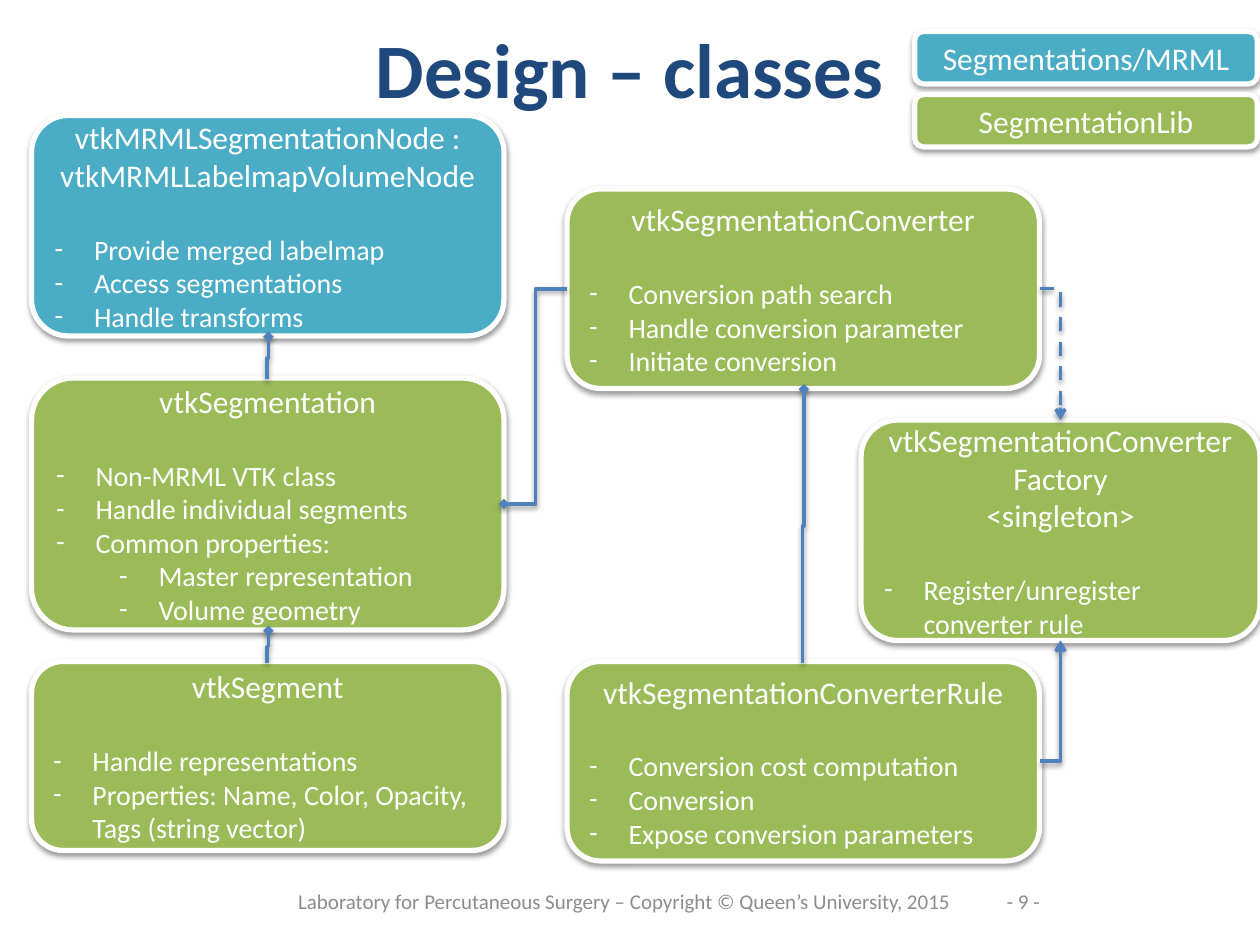
from dataclasses import dataclass
from typing import Optional

from lxml.etree import SubElement
from pptx import Presentation
from pptx.dml.color import RGBColor
from pptx.enum.dml import MSO_LINE
from pptx.enum.shapes import MSO_CONNECTOR, MSO_SHAPE
from pptx.enum.text import MSO_ANCHOR, PP_ALIGN
from pptx.oxml.ns import qn
from pptx.util import Pt

WHITE = RGBColor(0xFF, 0xFF, 0xFF)
TEAL = RGBColor(0x4B, 0xAC, 0xC6)
GREEN = RGBColor(0x9B, 0xBB, 0x59)
BLUE = RGBColor(0x4F, 0x81, 0xBD)
NAVY = RGBColor(0x1F, 0x49, 0x7D)
GRAY = RGBColor(0x8C, 0x8C, 0x8C)

# Text formats
HEAD = {"name": "Calibri", "size": Pt(18)}
ITEM = {"name": "Calibri", "size": Pt(16)}
TITLE = {"name": "Calibri", "size": Pt(44), "bold": True}
FOOT = {"name": "Calibri", "size": Pt(12)}

INDENT = 22.5  # hanging indent of a bullet
STEP = 36      # extra indent per level
GAP = 22       # space between heading and bullets


@dataclass
class Card:
    left: float
    top: float
    width: float
    height: float
    fill: RGBColor
    heads: tuple[str, ...]
    items: tuple[str, ...] = ()
    subs: tuple[str, ...] = ()


@dataclass
class Link:
    start: tuple[float, float]
    end: tuple[float, float]
    tip: str = "diamond"
    turn: bool = False    # leaves the card upward
    corner: bool = False  # one bend only
    dash: Optional[MSO_LINE] = None


@dataclass
class Label:
    left: float
    top: float
    width: float
    height: float
    text: str
    style: dict
    color: RGBColor


def add_text(para, text: str, style: dict, color: RGBColor) -> None:
    run = para.add_run()
    run.text = text
    for key, value in style.items():
        setattr(run.font, key, value)
    run.font.color.rgb = color


def add_bullet(para, level: int) -> None:
    props = para._p.get_or_add_pPr()
    props.set("marL", str(Pt(INDENT + STEP * level)))
    props.set("indent", str(-Pt(INDENT)))
    SubElement(props, qn("a:buFont"), typeface="Calibri")
    SubElement(props, qn("a:buChar"), char="-")
    para.level = level
    para.alignment = PP_ALIGN.LEFT


def add_shadow(effects) -> None:
    outer = SubElement(effects, qn("a:outerShdw"), blurRad=str(Pt(3.1)),
                       dist=str(Pt(1.6)), dir="5400000", rotWithShape="0")
    black = SubElement(outer, qn("a:srgbClr"), val="000000")
    SubElement(black, qn("a:alpha"), val="38000")


def draw_label(slide, label: Label) -> None:
    box = slide.shapes.add_textbox(Pt(label.left), Pt(label.top),
                                   Pt(label.width), Pt(label.height))
    frame = box.text_frame
    frame.word_wrap = True
    frame.vertical_anchor = MSO_ANCHOR.MIDDLE
    para = frame.paragraphs[0]
    para.alignment = PP_ALIGN.CENTER
    add_text(para, label.text, label.style, label.color)


def draw_card(slide, card: Card) -> None:
    shape = slide.shapes.add_shape(
        MSO_SHAPE.ROUNDED_RECTANGLE, Pt(card.left), Pt(card.top),
        Pt(card.width), Pt(card.height))
    shape.fill.solid()
    shape.fill.fore_color.rgb = card.fill
    shape.line.color.rgb = WHITE
    shape.line.width = Pt(3)
    shape.shadow.inherit = False
    add_shadow(shape._element.spPr.find(qn("a:effectLst")))

    frame = shape.text_frame
    frame.word_wrap = True
    frame.vertical_anchor = MSO_ANCHOR.MIDDLE
    for i, text in enumerate(card.heads):
        para = frame.add_paragraph() if i else frame.paragraphs[0]
        para.alignment = PP_ALIGN.CENTER
        add_text(para, text, HEAD, WHITE)
    rows = [(0, text) for text in card.items] + [(1, text) for text in card.subs]
    for i, (level, text) in enumerate(rows):
        para = frame.add_paragraph()
        add_bullet(para, level)
        if i == 0:
            para.space_before = Pt(GAP)
        add_text(para, text, ITEM, WHITE)


def draw_link(slide, link: Link) -> None:
    (x1, y1), (x2, y2) = link.start, link.end
    if link.turn:
        # Lay the line flat around its centre, to be turned a quarter
        mid_x, mid_y = (x1 + x2) / 2, (y1 + y2) / 2
        half_w, half_h = (y1 - y2) / 2, (x2 - x1) / 2
        x1, y1 = mid_x + half_w, mid_y + half_h
        x2, y2 = mid_x - half_w, mid_y - half_h
    line = slide.shapes.add_connector(MSO_CONNECTOR.ELBOW, Pt(x1), Pt(y1),
                                      Pt(x2), Pt(y2))
    line.line.color.rgb = BLUE
    line.line.width = Pt(2)
    if link.dash:
        line.line.dash_style = link.dash
    props = line._element.spPr
    if link.turn:
        props.find(qn("a:xfrm")).set("rot", "5400000")
    if link.corner:
        props.find(qn("a:prstGeom")).set("prst", "bentConnector2")
    SubElement(props.find(qn("a:ln")), qn("a:tailEnd"), type=link.tip)
    add_shadow(SubElement(props, qn("a:effectLst")))


# Column edges and card width
LEFT, MID, WIDE = 18, 324, 270
KEY = (522.7, 195.8, 30)

LABELS = [
    Label(563.8, 500.4, 41.8, 28.8, "- 9 -", FOOT, GRAY),
    Label(149.8, 500.4, 414, 28.8,
          "Laboratory for Percutaneous Surgery – Copyright © "
          "Queen’s University, 2015", FOOT, GRAY),
    Label(36, 5.8, 648, 66.2, "Design – classes", TITLE, NAVY),
]

CARDS = [
    Card(LEFT, 66, WIDE, 126, TEAL,
         ("vtkMRMLSegmentationNode : vtkMRMLLabelmapVolumeNode",),
         ("Provide merged labelmap", "Access segmentations",
          "Handle transforms")),
    Card(LEFT, 216, WIDE, 144, GREEN, ("vtkSegmentation",),
         ("Non-MRML VTK class", "Handle individual segments",
          "Common properties:"),
         ("Master representation", "Volume geometry")),
    Card(LEFT, 378, WIDE, 108, GREEN, ("vtkSegment",),
         ("Handle representations",
          "Properties: Name, Color, Opacity, Tags (string vector)")),
    Card(MID, 108, WIDE, 114, GREEN, ("vtkSegmentationConverter",),
         ("Conversion path search", "Handle conversion parameter",
          "Initiate conversion")),
    Card(MID, 378, WIDE, 114, GREEN, ("vtkSegmentationConverterRule",),
         ("Conversion cost computation", "Conversion",
          "Expose conversion parameters")),
    Card(492, 240, 228, 126, GREEN,
         ("vtkSegmentationConverterFactory", "<singleton>"),
         ("Register/unregister converter rule",)),
    # Colour key
    Card(KEY[0], 18, KEY[1], KEY[2], TEAL, ("Segmentations/MRML",)),
    Card(KEY[0], 54, KEY[1], KEY[2], GREEN, ("SegmentationLib",)),
]

LINKS = [
    Link((152.6, 216.7), (153.4, 192.5), turn=True),
    Link((152.6, 378.7), (153.4, 360.5), turn=True),
    Link((458.6, 378.7), (459.4, 222.5), turn=True),
    Link((324, 165), (288, 288)),
    Link((594, 165), (606, 240), "arrow", corner=True, dash=MSO_LINE.DASH),
    Link((594, 435), (606, 366), "arrow", corner=True),
]


def main() -> None:
    deck = Presentation()
    deck.slide_width, deck.slide_height = Pt(720), Pt(540)
    slide = deck.slides.add_slide(deck.slide_layouts[6])
    for label in LABELS:
        draw_label(slide, label)
    for card in CARDS:
        draw_card(slide, card)
    for link in LINKS:
        draw_link(slide, link)
    deck.save("out.pptx")


if __name__ == "__main__":
    main()
